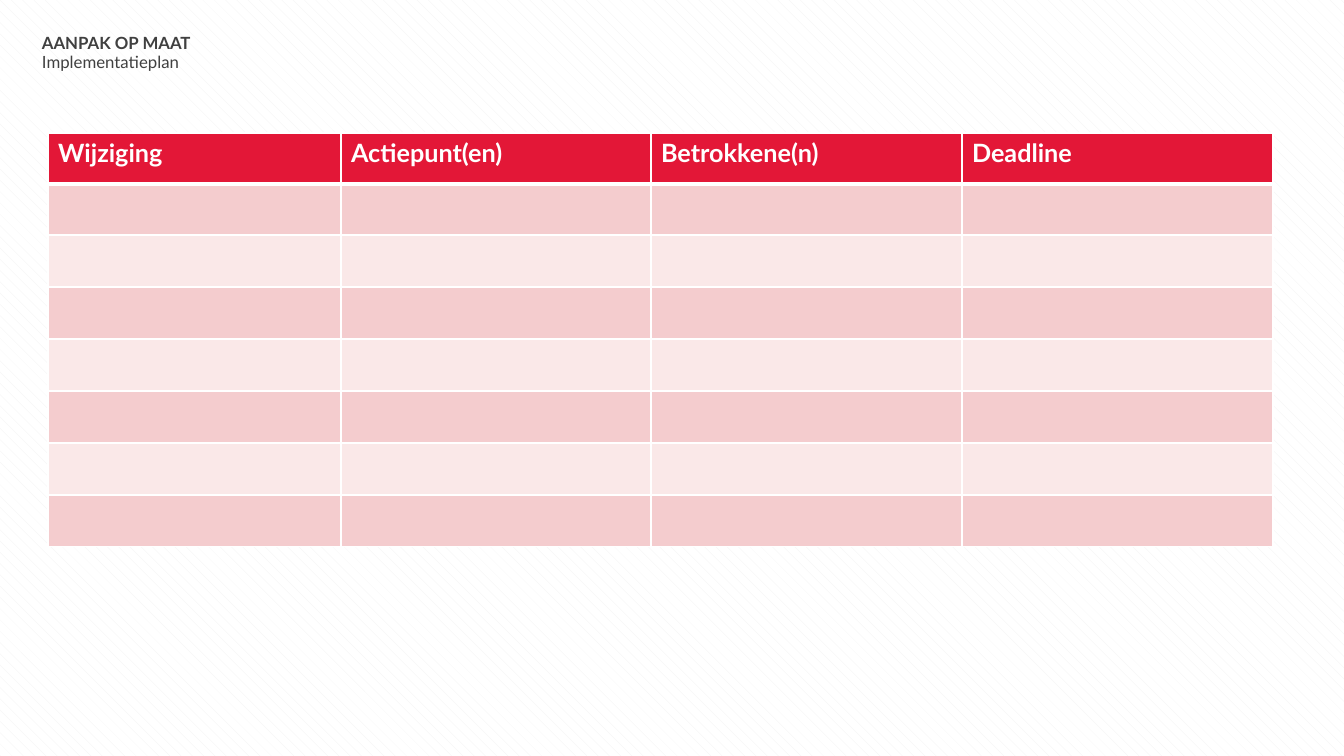
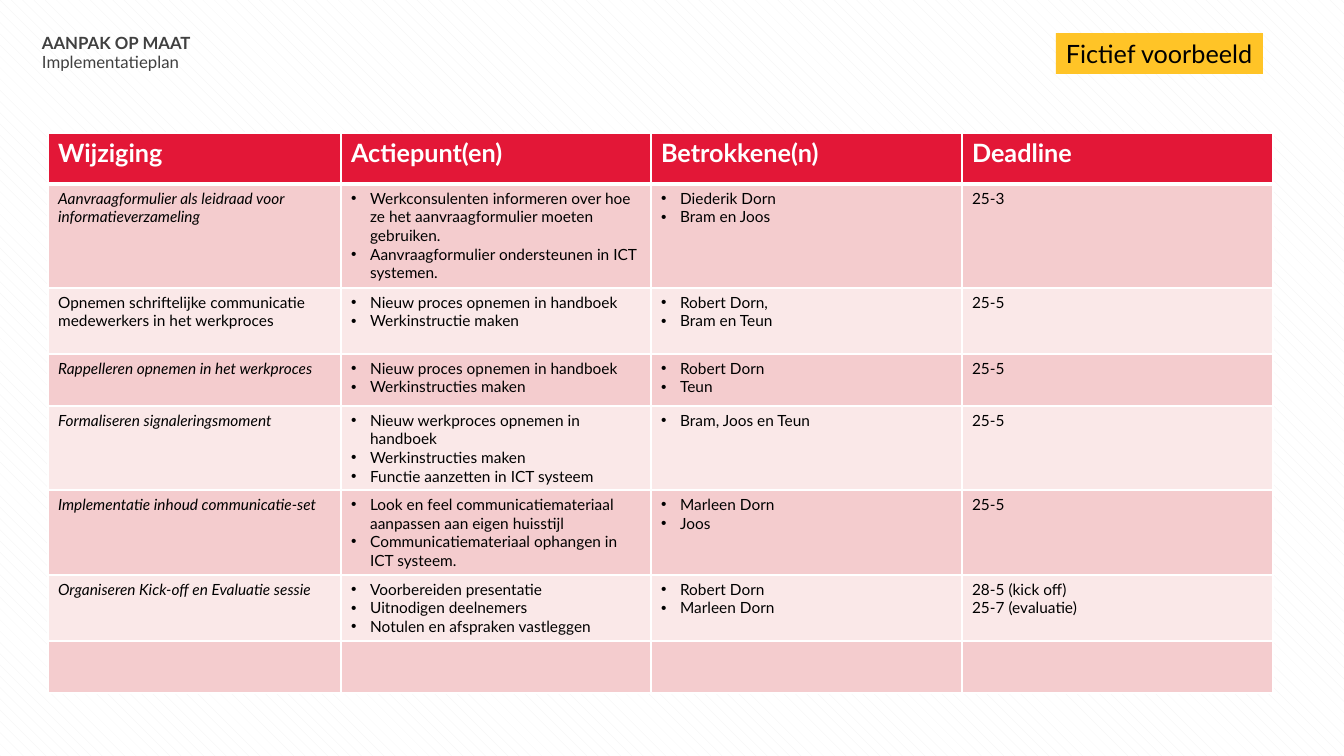
from lxml import etree
from pptx import Presentation
from pptx.dml.color import RGBColor
from pptx.enum.dml import MSO_PATTERN
from pptx.enum.shapes import MSO_SHAPE
from pptx.enum.text import MSO_ANCHOR, PP_ALIGN
from pptx.oxml.ns import qn
from pptx.util import Pt

SHINGLE = MSO_PATTERN.SHINGLE
RECTANGLE = MSO_SHAPE.RECTANGLE
MIDDLE = MSO_ANCHOR.MIDDLE
LEFT = PP_ALIGN.LEFT

FONT = "Lato"
COLORS = {
    "white": "FFFFFF",
    "stripe": "F2F2F2",
    "heading": "404040",
    "black": "000000",
    "red": "E31737",
    "pink": "F4CCCE",
    "light pink": "FAE8E8",
    "yellow": "FFC427",
}
BULLET_INDENT = 19


def px(length):
    return round(length * 914400 / 100.8)


def write(frame, *lines, size, color="black", bold=False, italic=False,
          bullets=False, spacing=0):
    for number, line in enumerate(lines):
        paragraph = frame.add_paragraph() if number else frame.paragraphs[0]
        paragraph.alignment = LEFT
        paragraph.space_before = paragraph.space_after = Pt(spacing)
        run = paragraph.add_run()
        run.text = line
        run.font.name = FONT
        run.font.size = Pt(size)
        run.font.bold = bold
        run.font.italic = italic
        run.font.color.rgb = RGBColor.from_string(COLORS[color])
        if bullets:
            properties = paragraph._p.get_or_add_pPr()
            properties.set("marL", str(px(BULLET_INDENT)))
            properties.set("indent", str(-px(BULLET_INDENT)))
            etree.SubElement(properties, qn("a:buFont"), typeface="Arial")
            etree.SubElement(properties, qn("a:buChar"), char="•")


# Content
headings = [("AANPAK OP MAAT", 33, True), ("Implementatieplan", 52, False)]
columns = [("Wijziging", 293), ("Actiepunt(en)", 310),
           ("Betrokkene(n)", 311), ("Deadline", 311)]

# Each change: text, italic, actions, people, deadlines
changes = [
    ("Aanvraagformulier als leidraad voor informatieverzameling", True,
     ["Werkconsulenten informeren over hoe ze het aanvraagformulier moeten gebruiken.",
      "Aanvraagformulier ondersteunen in ICT systemen."],
     ["Diederik Dorn", "Bram en Joos"], ["25-3"]),
    ("Opnemen schriftelijke communicatie medewerkers in het werkproces", False,
     ["Nieuw proces opnemen in handboek", "Werkinstructie maken"],
     ["Robert Dorn,", "Bram en Teun"], ["25-5"]),
    ("Rappelleren opnemen in het werkproces", True,
     ["Nieuw proces opnemen in handboek", "Werkinstructies maken"],
     ["Robert Dorn", "Teun"], ["25-5"]),
    ("Formaliseren signaleringsmoment", True,
     ["Nieuw werkproces opnemen in handboek", "Werkinstructies maken",
      "Functie aanzetten in ICT systeem"],
     ["Bram, Joos en Teun"], ["25-5"]),
    ("Implementatie inhoud communicatie-set", True,
     ["Look en feel communicatiemateriaal aanpassen aan eigen huisstijl",
      "Communicatiemateriaal ophangen in ICT systeem."],
     ["Marleen Dorn", "Joos"], ["25-5"]),
    ("Organiseren Kick-off en Evaluatie sessie", True,
     ["Voorbereiden presentatie", "Uitnodigen deelnemers",
      "Notulen en afspraken vastleggen"],
     ["Robert Dorn", "Marleen Dorn"], ["28-5 (kick off)", "25-7 (evaluatie)"]),
]
plans = [
    ([51, 51] + [52] * 6, [], None),
    ([51, 104, 66, 52, 84, 85, 66, 52], changes, "Fictief voorbeeld"),
]

# Presentation and shared background
prs = Presentation()
prs.slide_width, prs.slide_height = px(1344), px(756)
backdrop = prs.slide_master.background.fill
backdrop.patterned()
backdrop.pattern = SHINGLE
backdrop.fore_color.rgb = RGBColor.from_string(COLORS["stripe"])
backdrop.back_color.rgb = RGBColor.from_string(COLORS["white"])

for row_heights, plan_changes, label in plans:
    slide = prs.slides.add_slide(prs.slide_layouts[6])

    # Headings
    for heading, top, bold in headings:
        frame = slide.shapes.add_textbox(px(42), px(top), px(397), px(19)).text_frame
        frame.margin_left = frame.margin_right = 0
        frame.margin_top = frame.margin_bottom = 0
        frame.word_wrap = True
        frame.vertical_anchor = MIDDLE
        write(frame, heading, size=12, color="heading", bold=bold, spacing=3)

    # Table grid
    plan = slide.shapes.add_table(
        len(row_heights), len(columns), px(48), px(133),
        px(sum(width for _, width in columns)), px(sum(row_heights))).table
    for column, (title, width) in enumerate(columns):
        plan.columns[column].width = px(width)
        write(plan.cell(0, column).text_frame, title, size=18, color="white", bold=True)

    # Row heights, borders and fills
    for row, height in enumerate(row_heights):
        plan.rows[row].height = px(height)
        row_color = "red" if row == 0 else "pink" if row % 2 else "light pink"
        for cell in plan.rows[row].cells:
            properties = cell._tc.get_or_add_tcPr()
            for side in "LRTB":
                thick = (row, side) in [(0, "B"), (1, "T")]
                border = etree.SubElement(properties, qn(f"a:ln{side}"),
                                          w=str(Pt(3 if thick else 1)))
                border_fill = etree.SubElement(border, qn("a:solidFill"))
                etree.SubElement(border_fill, qn("a:srgbClr"), val=COLORS["white"])
            cell.fill.solid()
            cell.fill.fore_color.rgb = RGBColor.from_string(COLORS[row_color])

    # Changes
    for row, (change, italic, actions, people, deadlines) in enumerate(plan_changes, 1):
        change_frame, action_frame, people_frame, deadline_frame = (
            cell.text_frame for cell in plan.rows[row].cells)
        write(change_frame, change, size=11, italic=italic)
        write(action_frame, *actions, size=11, bullets=True)
        write(people_frame, *people, size=11, bullets=True)
        write(deadline_frame, *deadlines, size=11)

    # Example label
    if label:
        badge = slide.shapes.add_shape(RECTANGLE, px(1056), px(33), px(207), px(41))
        badge.shadow.inherit = False
        badge.fill.solid()
        badge.fill.fore_color.rgb = RGBColor.from_string(COLORS["yellow"])
        badge.line.fill.background()
        badge.text_frame.word_wrap = False
        write(badge.text_frame, label, size=18)

prs.save("out.pptx")
